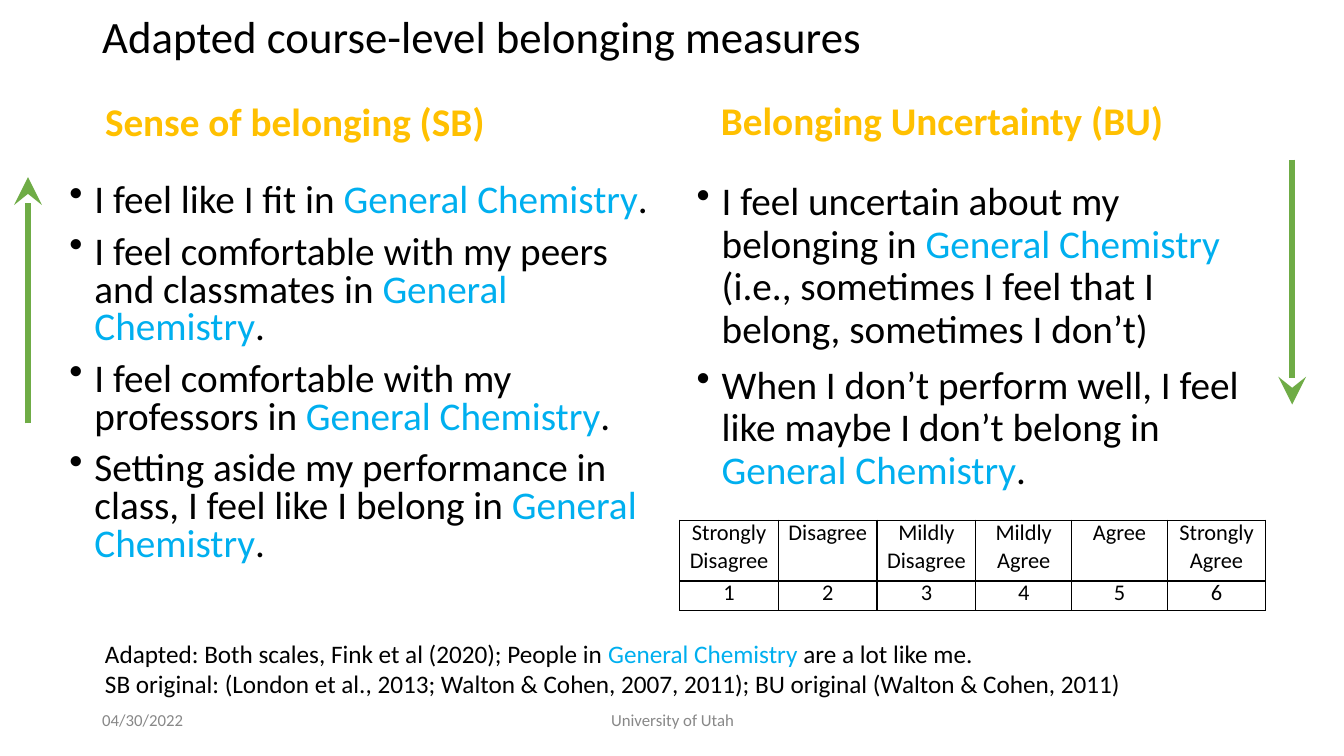
from lxml.etree import SubElement
from pptx import Presentation
from pptx.dml.color import RGBColor
from pptx.enum.shapes import MSO_CONNECTOR
from pptx.enum.text import PP_ALIGN
from pptx.oxml.ns import qn
from pptx.util import Pt

FONT = "Calibri"
BLACK, GOLD, BLUE, GREEN, GRAY = "000000", "FFC000", "00AFEF", "6FAC46", "888888"
COURSE = "General Chemistry"

# text, left, top, width, height, size, colour, bold
LABELS = [
    ("Adapted course-level belonging measures", 73, 6.5, 560, 40, 32, BLACK, False),
    ("Sense of belonging (SB)", 75, 69.3, 320, 35, 28, GOLD, True),
    ("Belonging Uncertainty (BU)", 515, 68.6, 330, 35, 28, GOLD, True),
    ("04/30/2022", 73, 507, 100, 16, 12, GRAY, False),
    ("University of Utah", 436.5, 507, 150, 16, 12, GRAY, False),
]
SB_ITEMS = [
    "I feel like I fit in General Chemistry.",
    "I feel comfortable with my peers and classmates in General Chemistry.",
    "I feel comfortable with my professors in General Chemistry.",
    "Setting aside my performance in class, I feel like I belong in General Chemistry.",
]
BU_ITEMS = [
    "I feel uncertain about my belonging in General Chemistry (i.e., sometimes "
    "I feel that I belong, sometimes I don’t)",
    "When I don’t perform well, I feel like maybe I don’t belong in General Chemistry.",
]
SOURCES = [
    "Adapted: Both scales, Fink et al (2020); People in General Chemistry are a lot like me.",
    "SB original: (London et al., 2013; Walton & Cohen, 2007, 2011); "
    "BU original (Walton & Cohen, 2011)",
]
SCALE = ["Strongly\nDisagree", "Disagree", "Mildly\nDisagree",
         "Mildly\nAgree", "Agree", "Strongly\nAgree"]
SCALE_WIDTHS = [70.5, 70.5, 70.5, 68.5, 68.5, 70]
SCALE_HEIGHTS = [43.5, 21]
# x, tail y, head y
ARROWS = [(20, 302.5, 126.5), (923, 114, 289)]


def rgb(color):
    return RGBColor.from_string(color)


def style(font, size, color, bold=False):
    font.name, font.size, font.bold = FONT, Pt(size), bold
    font.color.rgb = rgb(color)


def add_text(s, left, top, width, height):
    tf = s.shapes.add_textbox(Pt(left), Pt(top), Pt(width), Pt(height)).text_frame
    tf.word_wrap = True
    tf.margin_left = tf.margin_top = tf.margin_right = tf.margin_bottom = 0
    return tf


def add_lines(tf, lines, size):
    """Write one paragraph per line, with the course name in blue."""
    for i, line in enumerate(lines):
        p = tf.add_paragraph() if i else tf.paragraphs[0]
        style(p.font, size, BLACK)
        for part in line.partition(COURSE):
            if part:
                r = p.add_run()
                r.text = part
                style(r.font, size, BLUE if part == COURSE else BLACK)


def bullet(p):
    pPr = p._p.get_or_add_pPr()
    pPr.set("marL", str(Pt(18.5)))
    pPr.set("indent", str(Pt(-18)))
    mark = pPr.makeelement(qn("a:buChar"), {"char": "•"})
    pPr.insert_element_before(mark, "a:tabLst", "a:defRPr", "a:extLst")


def add_bullets(s, box, items, first_spacing, spacing, gap):
    tf = add_text(s, *box)
    add_lines(tf, items, 28)
    for i, p in enumerate(tf.paragraphs):
        bullet(p)
        p.line_spacing = spacing if i else first_spacing
        p.space_before = Pt(gap if i else 0)


def border(cell):
    tcPr = cell._tc.get_or_add_tcPr()
    for i, side in enumerate(("lnL", "lnR", "lnT", "lnB")):
        ln = tcPr.makeelement(qn("a:" + side), {"w": str(Pt(1))})
        SubElement(SubElement(ln, qn("a:solidFill")), qn("a:srgbClr"), val=BLACK)
        tcPr.insert(i, ln)


def add_scale(s, left, top):
    rows = [SCALE, [str(n + 1) for n in range(len(SCALE))]]
    table = s.shapes.add_table(len(rows), len(SCALE), Pt(left), Pt(top),
                               Pt(sum(SCALE_WIDTHS)), Pt(sum(SCALE_HEIGHTS))).table
    for column, width in zip(table.columns, SCALE_WIDTHS):
        column.width = Pt(width)
    for r, texts in enumerate(rows):
        table.rows[r].height = Pt(SCALE_HEIGHTS[r])
        for c, text in enumerate(texts):
            cell = table.cell(r, c)
            cell.margin_left = cell.margin_top = cell.margin_right = cell.margin_bottom = 0
            cell.fill.background()
            border(cell)
            cell.text = text
            for i, p in enumerate(cell.text_frame.paragraphs):
                style(p.font, 16, BLACK)
                p.alignment = PP_ALIGN.CENTER
                p.line_spacing = Pt(18.6)
                p.space_before = Pt(2 if i else 0)


def add_arrow(s, x, tail, head):
    line = s.shapes.add_connector(MSO_CONNECTOR.STRAIGHT, Pt(x), Pt(tail), Pt(x), Pt(head))
    line.line.width = Pt(4)
    line.line.color.rgb = rgb(GREEN)
    SubElement(line.line._get_or_add_ln(), qn("a:tailEnd"), type="stealth", w="lg", len="lg")
    SubElement(line._element.spPr, qn("a:effectLst"))


def main():
    prs = Presentation()
    prs.slide_width, prs.slide_height = Pt(960), Pt(540)
    s = prs.slides.add_slide(prs.slide_layouts[6])
    for text, left, top, width, height, size, color, bold in LABELS:
        p = add_text(s, left, top, width, height).paragraphs[0]
        p.text = text
        style(p.font, size, color, bold)
    add_bullets(s, (49, 124.5, 418, 280), SB_ITEMS, 1.0, 0.8, 10)
    add_bullets(s, (497, 129.5, 392, 222), BU_ITEMS, Pt(30.3), Pt(30.3), 9.8)
    add_lines(add_text(s, 75, 456, 740, 45), SOURCES, 18)
    add_scale(s, 485.5, 371.5)
    for arrow in ARROWS:
        add_arrow(s, *arrow)
    prs.save("out.pptx")


if __name__ == "__main__":
    main()
